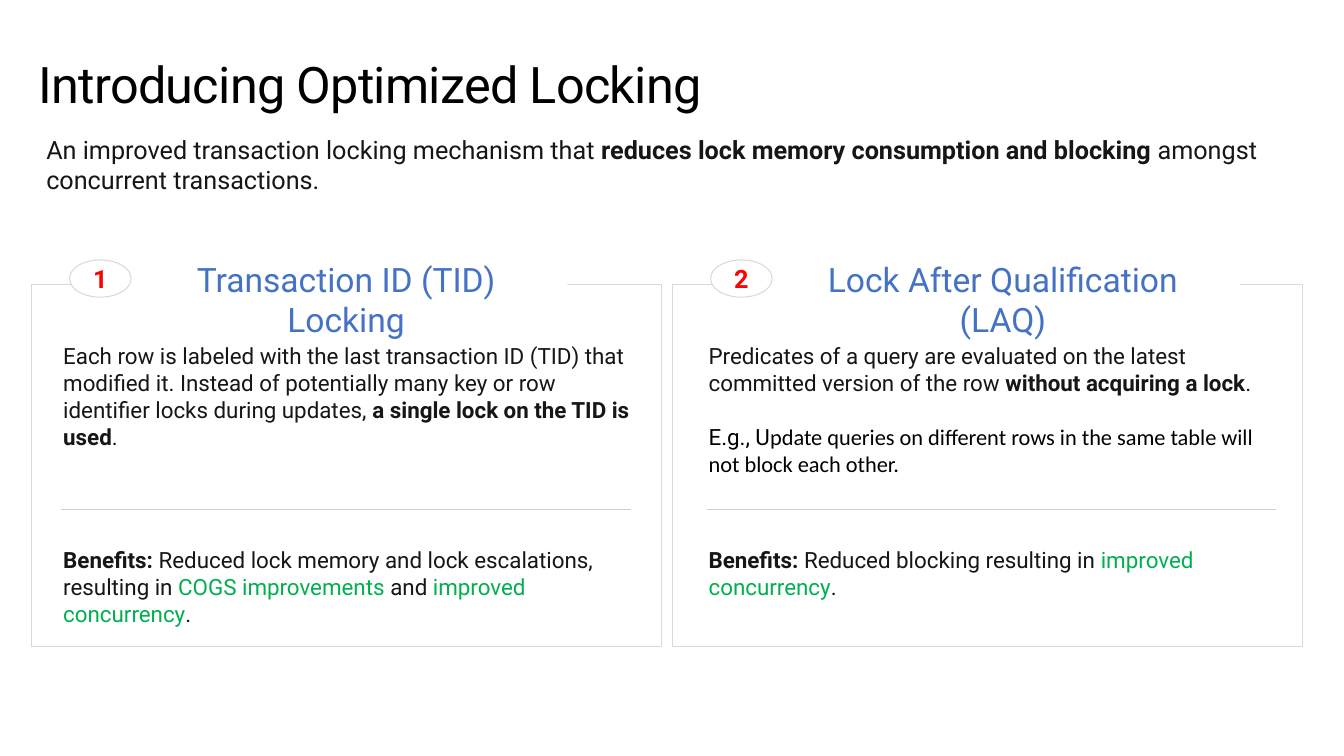
from dataclasses import dataclass

from pptx import Presentation
from pptx import util as u
from pptx.dml.color import RGBColor
from pptx.enum import shapes, text
from pptx.oxml.ns import qn
from lxml import etree

Pt = u.Pt


@dataclass(frozen=True)
class Theme:
    font: str = "Roboto"
    alternate_font: str = "Calibri"
    black: str = "000000"
    ink: str = "161616"
    blue: str = "4472C4"
    green: str = "00B050"
    red: str = "FF0000"
    white: str = "FFFFFF"
    border: str = "D9D9D9"
    rule: str = "D0CECE"
    title_size: int = 36
    heading_size: int = 24
    lead_size: int = 18
    body_size: int = 16


THEME = Theme()


def color(value):
    return RGBColor.from_string(value)


def write(para, spans, size, base=THEME.ink):
    """Fill a paragraph from (words, style) pairs."""
    for words, style in spans:
        span = para.add_run()
        span.text = words
        font = span.font
        font.size = Pt(size)
        font.name = style.get("font", THEME.font)
        font.bold = style.get("bold", False)
        font.color.rgb = color(style.get("color", base))


def fit_frame(frame, margin_x, margin_y, anchor=text.MSO_ANCHOR.TOP):
    frame.word_wrap = True
    frame.vertical_anchor = anchor
    frame.margin_left = frame.margin_right = Pt(margin_x)
    frame.margin_top = frame.margin_bottom = Pt(margin_y)


def add_text(page, x, y, width, height, paragraphs, size, margins=(1.44, 1.44), gap=0):
    box = page.shapes.add_textbox(Pt(x), Pt(y), Pt(width), Pt(height))
    frame = box.text_frame
    fit_frame(frame, *margins)
    frame.auto_size = text.MSO_AUTO_SIZE.SHAPE_TO_FIT_TEXT
    for index, spans in enumerate(paragraphs):
        para = frame.add_paragraph() if index else frame.paragraphs[0]
        if index:
            para.space_before = Pt(gap)
        write(para, spans, size)
    return box


def add_outline(page, kind, x, y, width, height, fill=None, line=None):
    box = page.shapes.add_shape(kind, Pt(x), Pt(y), Pt(width), Pt(height))
    box.shadow.inherit = False
    if fill:
        box.fill.solid()
        box.fill.fore_color.rgb = color(fill)
    else:
        box.fill.background()
    if line:
        box.line.color.rgb = color(line)
        box.line.width = Pt(0.75)
    else:
        box.line.fill.background()
    return box


def add_label(box, words, size, tint, margin_x, anchor, bold=False):
    fit_frame(box.text_frame, margin_x, 7.2, anchor)
    para = box.text_frame.paragraphs[0]
    para.alignment = text.PP_ALIGN.CENTER
    write(para, [(words, {"color": tint, "bold": bold})], size)


def add_rule(page, x, y, width):
    rule = page.shapes.add_connector(
        shapes.MSO_CONNECTOR.STRAIGHT, Pt(x), Pt(y), Pt(x + width), Pt(y))
    rule.line.color.rgb = color(THEME.rule)
    rule.line.width = Pt(0.5)
    etree.SubElement(rule._element.spPr, qn("a:effectLst"))


def add_header(page, x, y, width):
    # Title
    title = add_text(page, x + 1.4, y, width - 10, 31.7,
                     [[("Introducing Optimized Locking", {"color": THEME.black})]],
                     THEME.title_size, (0, 0))
    para = title.text_frame.paragraphs[0]
    para.line_spacing = Pt(31.3)
    para.runs[0].font._element.set("spc", "-50")
    # Lead sentence
    add_text(page, x, y + 42.5, width, 51,
             [[("An improved transaction locking mechanism that ", {}),
               ("reduces lock memory consumption and blocking ", BOLD),
               ("amongst concurrent transactions.", {})]],
             THEME.lead_size, (7.2, 3.6))


def add_panel(page, x, y, width, height, panel):
    # Frame, with the heading set into its top edge
    add_outline(page, shapes.MSO_SHAPE.RECTANGLE, x, y, width, height, line=THEME.border)
    heading = add_outline(page, shapes.MSO_SHAPE.RECTANGLE, x + 67, y - 25.5,
                          panel["heading_width"], 44, fill=THEME.white)
    add_label(heading, panel["heading"], THEME.heading_size, THEME.blue, 11.5,
              text.MSO_ANCHOR.TOP)
    # Number badge
    badge = add_outline(page, shapes.MSO_SHAPE.OVAL, x + 27.4, y - 17.3, 44, 26.6,
                        fill=THEME.white, line=THEME.border)
    add_label(badge, panel["number"], THEME.lead_size, THEME.red, 7.2,
              text.MSO_ANCHOR.MIDDLE, bold=True)
    # Description, rule, benefits
    left = x + panel["indent"]
    add_text(page, left, y + 40.3, 411, 80, panel["description"], THEME.body_size, gap=19)
    add_rule(page, left, y + 160.6, 407)
    add_text(page, left, y + 185.8, 411, 61, [panel["benefits"]], THEME.body_size)


BOLD = {"bold": True}
GREEN = {"color": THEME.green}
BLACK = {"color": THEME.black}

PANELS = [
    {
        "number": "1", "heading": "Transaction ID (TID) Locking",
        "heading_width": 316, "indent": 21.4,
        "description": [[
            ("Each row is labeled with the last transaction ID (TID) that modified it. "
             "Instead of potentially many key or row identifier locks during updates, ", {}),
            ("a single lock on the TID is used", BOLD), (".", {})]],
        "benefits": [
            ("Benefits: ", BOLD),
            ("Reduced lock memory and lock escalations, resulting in ", {}),
            ("COGS improvements ", GREEN), ("and ", {}),
            ("improved concurrency", GREEN), (".", {})],
    },
    {
        "number": "2", "heading": "Lock After Qualification (LAQ)",
        "heading_width": 338.4, "indent": 24.5,
        "description": [
            [("Predicates of a query are evaluated on the latest committed version "
              "of the row ", {}),
             ("without acquiring a lock", BOLD), (".", {})],
            [("E.g., U", BLACK),
             ("pdate queries on different rows in the same table will not block each other.",
              {**BLACK, "font": THEME.alternate_font})]],
        "benefits": [
            ("Benefits: ", BOLD), ("Reduced blocking resulting in ", {}),
            ("improved concurrency", GREEN), (".", {})],
    },
]


def main():
    deck = Presentation()
    deck.slide_width, deck.slide_height = Pt(960), Pt(540)
    page = deck.slides.add_slide(deck.slide_layouts[6])
    add_header(page, 26, 49.7, 900)
    panel_width, panel_gap = 450, 7.9
    for index, panel in enumerate(PANELS):
        add_panel(page, 22.3 + index * (panel_width + panel_gap), 203,
                  panel_width, 258.5, panel)
    deck.save("out.pptx")


if __name__ == "__main__":
    main()
